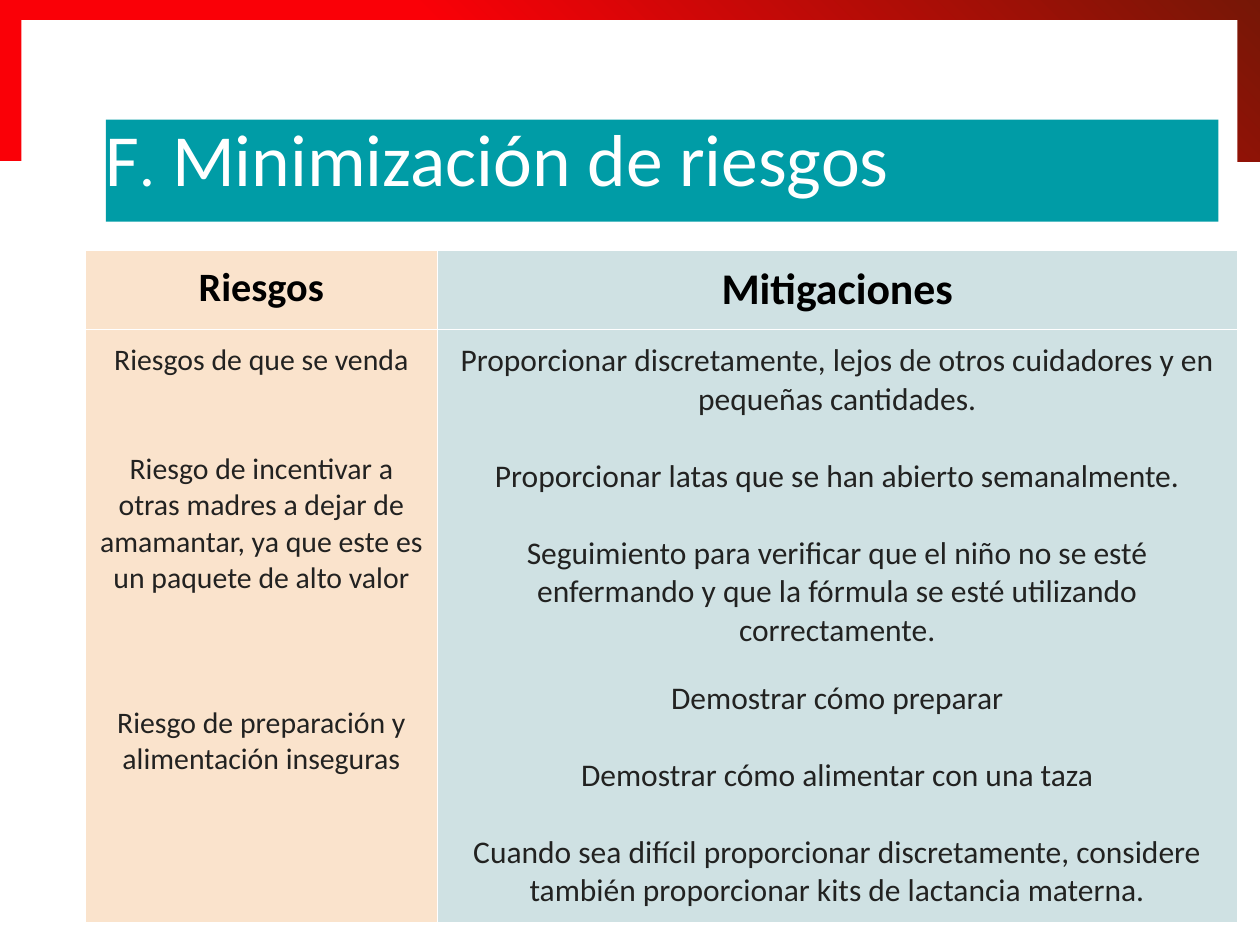
from dataclasses import dataclass

import pptx
import pptx.dml.color
import pptx.enum.dml
import pptx.enum.shapes
import pptx.enum.text
import pptx.oxml
import pptx.oxml.ns
import pptx.util
from pptx.util import Inches


@dataclass(frozen=True)
class Theme:
    font: str = "Calibri"
    red: str = "FA0007"
    dark_red: str = "761706"
    teal: str = "009CA6"
    white: str = "FFFFFF"
    black: str = "000000"
    text: str = "222221"
    peach: str = "FAE1C7"
    mist: str = "CADEE0"
    title_size: int = 42
    dot_size: int = 36


THEME = Theme()

# Each column: heading, heading size, body size, fill,
# then body paragraphs with the space before each in points.
COLUMNS = [
    ("Riesgos", 23, 17, THEME.peach, [
        ("Riesgos de que se venda", 0),
        ("Riesgo de incentivar a otras madres a dejar de amamantar, "
         "ya que este es un paquete de alto valor", 41.5),
        ("Riesgo de preparación y alimentación inseguras", 62),
    ]),
    ("Mitigaciones", 25, 18, THEME.mist, [
        ("Proporcionar discretamente, lejos de otros cuidadores y en "
         "pequeñas cantidades.", 0),
        ("Proporcionar latas que se han abierto semanalmente.", 22),
        ("Seguimiento para verificar que el niño no se esté enfermando y "
         "que la fórmula se esté utilizando correctamente.", 22),
        ("Demostrar cómo preparar", 17),
        ("Demostrar cómo alimentar con una taza", 22),
        ("Cuando sea difícil proporcionar discretamente, considere "
         "también proporcionar kits de lactancia materna.", 22),
    ]),
]


def rgb(color):
    return pptx.dml.color.RGBColor.from_string(color)


def style_font(font, size, color, bold=False):
    font.name = THEME.font
    font.size = pptx.util.Pt(size)
    font.bold = bold
    font.color.rgb = rgb(color)


def add_rect(s, left, top, width, height):
    sp = s.shapes.add_shape(pptx.enum.shapes.MSO_SHAPE.RECTANGLE,
                            left, top, width, height)
    sp.shadow.inherit = False
    sp.line.fill.background()
    return sp


def add_frame(s, left, top, width, height):
    """Gradient band whose middle is covered by a white panel."""
    band = add_rect(s, left, top, width, height)
    band.fill.gradient()
    band.fill.gradient_angle = 45
    start, end = band.fill.gradient_stops
    start.color.rgb, start.position = rgb(THEME.red), 0.4
    end.color.rgb, end.position = rgb(THEME.dark_red), 1

    panel = add_rect(s, left + Inches(0.17), top + Inches(0.16),
                     width - Inches(0.35), height - Inches(0.1))
    panel.fill.solid()
    panel.fill.fore_color.rgb = rgb(THEME.white)


def add_title(s, left, top, width, height):
    sp = s.shapes.add_textbox(left, top, width, height)
    sp.fill.solid()
    sp.fill.fore_color.rgb = rgb(THEME.teal)
    tf = sp.text_frame
    tf.word_wrap = True
    tf.margin_left = tf.margin_right = tf.margin_top = tf.margin_bottom = 0
    p = tf.paragraphs[0]
    p.line_spacing = 0.95
    for text, size in (("F", THEME.title_size), (".", THEME.dot_size),
                       (" Minimización de riesgos", THEME.title_size)):
        r = p.add_run()
        r.text = text
        style_font(r.font, size, THEME.white)


def style_cell(cell, fill):
    """Thin white borders, then a fill at 90 % opacity."""
    tc_pr = cell._tc.get_or_add_tcPr()
    for side in ("lnL", "lnR", "lnT", "lnB"):
        tc_pr.append(pptx.oxml.parse_xml(
            f'<a:{side} {pptx.oxml.ns.nsdecls("a")} w="9525"><a:solidFill>'
            f'<a:srgbClr val="{THEME.white}"/></a:solidFill></a:{side}>'))
    cell.fill.solid()
    cell.fill.fore_color.rgb = rgb(fill)
    color = tc_pr.find(pptx.oxml.ns.qn("a:solidFill"))[0]
    color.append(pptx.oxml.parse_xml(
        f'<a:alpha {pptx.oxml.ns.nsdecls("a")} val="90000"/>'))
    cell.margin_left = cell.margin_right = Inches(0.1)
    cell.margin_top = cell.margin_bottom = Inches(0.1)


def fill_cell(cell, paragraphs, size, color, bold=False):
    tf = cell.text_frame
    tf.text = "\n".join(text for text, _ in paragraphs)
    for p, (_, space) in zip(tf.paragraphs, paragraphs):
        p.alignment = pptx.enum.text.PP_ALIGN.CENTER
        if space:
            p.space_before = pptx.util.Pt(space)
        for r in p.runs:
            style_font(r.font, size, color, bold)


def add_risk_table(s, left, top, width, height):
    table = s.shapes.add_table(2, len(COLUMNS), left, top, width, height).table
    table.first_row = table.horz_banding = False
    table.columns[0].width = Inches(2.79)
    table.columns[1].width = width - Inches(2.79)
    table.rows[0].height = Inches(0.61)
    table.rows[1].height = height - Inches(0.61)
    for i, (heading, head_size, body_size, fill, body) in enumerate(COLUMNS):
        head_cell, body_cell = table.cell(0, i), table.cell(1, i)
        style_cell(head_cell, fill)
        style_cell(body_cell, fill)
        fill_cell(head_cell, [(heading, 0)], head_size, THEME.black, bold=True)
        fill_cell(body_cell, body, body_size, THEME.text)


def main():
    prs = pptx.Presentation()
    prs.slide_width, prs.slide_height = Inches(10), Inches(7.5)
    s = prs.slides.add_slide(prs.slide_layouts[6])
    add_frame(s, 0, 0, prs.slide_width, Inches(1.28))
    add_risk_table(s, Inches(0.68), Inches(1.99), Inches(9.14), Inches(5.32))
    add_title(s, Inches(0.84), Inches(0.95), Inches(8.83), Inches(0.81))
    prs.save("out.pptx")


if __name__ == "__main__":
    main()
